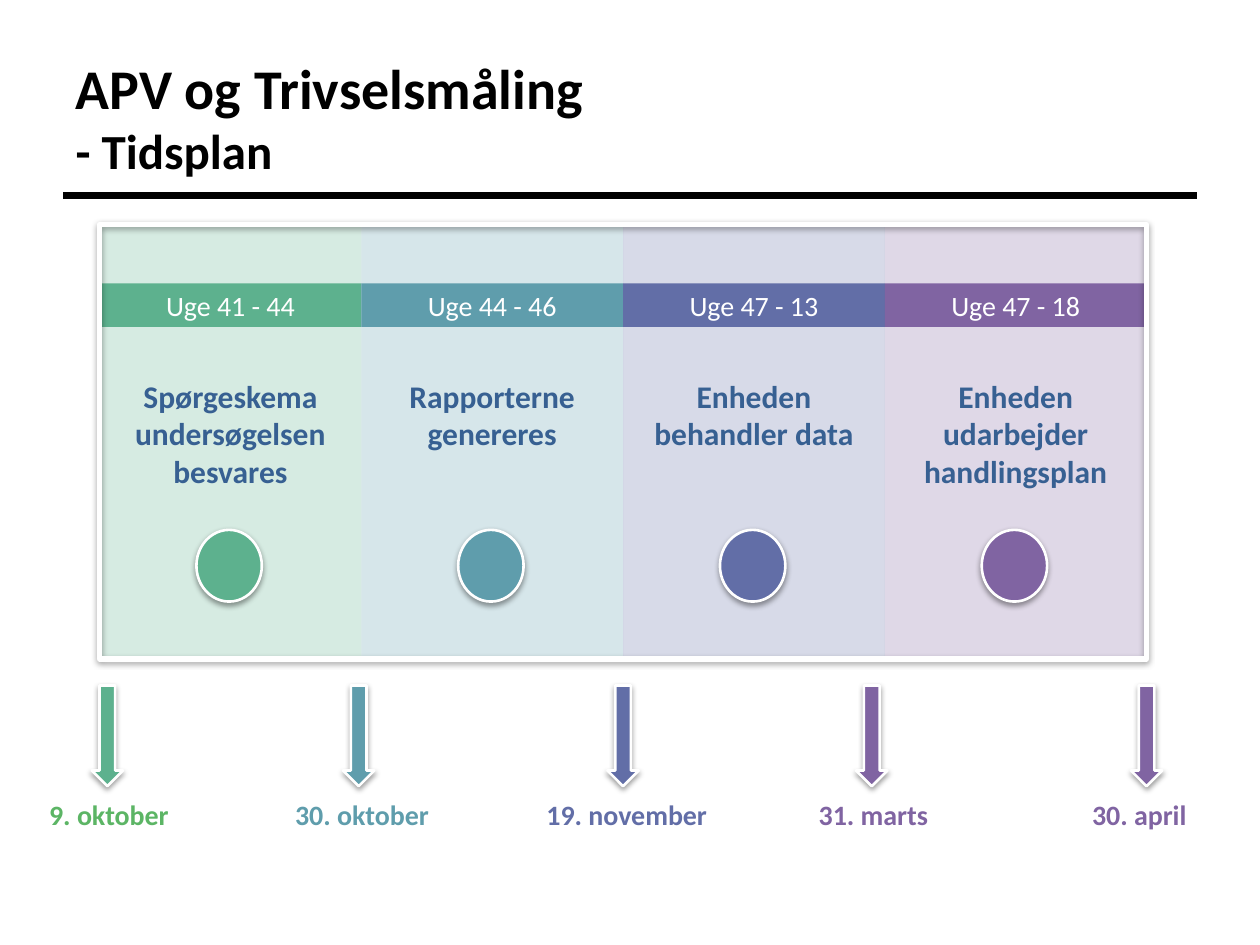
import dataclasses

import lxml.etree
import pptx
import pptx.dml.color
import pptx.enum.shapes
import pptx.enum.text
import pptx.oxml
import pptx.oxml.ns
import pptx.util

KIND = pptx.enum.shapes.MSO_SHAPE
SIDE = pptx.enum.text.PP_ALIGN
HOLD = pptx.enum.text.MSO_ANCHOR
FIT = pptx.enum.text.MSO_AUTO_SIZE
QN = pptx.oxml.ns.qn


@dataclasses.dataclass(frozen=True)
class Theme:
    """Colours, font and type sizes of the slide."""
    font: str = "Calibri"
    ink: str = "000000"
    white: str = "FFFFFF"
    body: str = "376092"
    lime: str = "5CB565"
    green: str = "5DB18E"
    teal: str = "5F9DAC"
    blue: str = "626EA7"
    plum: str = "8064A2"
    head: int = 32
    sub: int = 28
    task: int = 18
    small: int = 16


LOOK = Theme()

PHASES = [
    ("Uge 41 - 44", "Spørgeskema undersøgelsen besvares", LOOK.green),
    ("Uge 44 - 46", "Rapporterne genereres", LOOK.teal),
    ("Uge 47 - 13", "Enheden behandler data", LOOK.blue),
    ("Uge 47 - 18", "Enheden udarbejder handlingsplan", LOOK.plum),
]

DATES = [
    ("9. oktober", 0.03, -0.24, 0.64, LOOK.green, LOOK.lime, SIDE.LEFT),
    ("30. oktober", 0.99, 0.7, 0.7, LOOK.teal, LOOK.teal, SIDE.LEFT),
    ("19. november", 2, 1.66, 0.81, LOOK.blue, LOOK.blue, SIDE.LEFT),
    ("31. marts", 2.95, 2.7, 0.59, LOOK.plum, LOOK.plum, SIDE.LEFT),
    ("30. april", 4, 3.71, 0.49, LOOK.plum, LOOK.plum, SIDE.RIGHT),
]


@dataclasses.dataclass(frozen=True)
class Box:
    """A region that is divided into columns and rows."""
    left: float
    top: float
    wide: float
    high: float
    cols: float = 1
    rows: float = 1

    def cut(self, col, row, wide, high, cols=1, rows=1):
        """Return the part that spans the given cells."""
        dx, dy = self.wide / self.cols, self.high / self.rows
        return Box(self.left + col * dx, self.top + row * dy,
                   wide * dx, high * dy, cols, rows)

    def place(self):
        """Return left, top, width and height as lengths."""
        return [pptx.util.Inches(n)
                for n in (self.left, self.top, self.wide, self.high)]


def tint(code):
    """Turn a hex code into a colour."""
    return pptx.dml.color.RGBColor.from_string(code)


def write(frame, text, size, color, bold=False, align=SIDE.CENTER,
          anchor=HOLD.TOP, wrap=True, fit=FIT.NONE, sub=None):
    """Fill a text frame, with later lines in the sub size."""
    frame.word_wrap = wrap
    frame.auto_size = fit
    frame.vertical_anchor = anchor
    para = frame.paragraphs[0]
    para.alignment = align
    for spot, line in enumerate(text.split("\n")):
        if spot:
            para.add_line_break()
        run = para.add_run()
        run.text = line
        run.font.name = LOOK.font
        run.font.size = pptx.util.Pt(sub if spot else size)
        run.font.bold = bold
        run.font.color.rgb = tint(color)


def label(slide, box, text, size, color, **form):
    """Add a bold text box that grows with its text."""
    note = slide.shapes.add_textbox(*box.place())
    write(note.text_frame, text, size, color, bold=True,
          fit=FIT.SHAPE_TO_FIT_TEXT, **form)


def shade(shape):
    """Give a shape a soft shadow below it."""
    pack = shape._element.spPr.find(QN("a:effectLst"))
    cast = lxml.etree.SubElement(
        pack, QN("a:outerShdw"), blurRad="40000", dist="20000",
        dir="5400000", rotWithShape="0")
    tone = lxml.etree.SubElement(cast, QN("a:srgbClr"), val=LOOK.ink)
    lxml.etree.SubElement(tone, QN("a:alpha"), val="38000")


def draw(slide, kind, box, fill=None, edge=None, alpha=None):
    """Add a preset shape; an edged one also casts a shadow."""
    shape = slide.shapes.add_shape(kind, *box.place())
    shape.shadow.inherit = False
    if fill:
        shape.fill.solid()
        shape.fill.fore_color.rgb = tint(fill)
    else:
        shape.fill.background()
    if alpha:
        tone = shape._element.spPr.find(QN("a:solidFill"))[0]
        lxml.etree.SubElement(tone, QN("a:alpha"), val=str(alpha * 1000))
    if edge:
        shape.line.color.rgb = tint(LOOK.white)
        shape.line.width = pptx.util.Pt(edge)
        shade(shape)
    else:
        shape.line.fill.background()
    return shape


def header(slide, box):
    """Place the title and the rule along its foot."""
    title = slide.shapes.title
    title.left, title.top, title.width, title.height = box.place()
    write(title.text_frame, "APV og Trivselsmåling\n- Tidsplan", LOOK.head,
          LOOK.ink, bold=True, align=SIDE.LEFT, anchor=HOLD.MIDDLE,
          sub=LOOK.sub)
    left, top, wide, high = box.place()
    rule = slide.shapes.add_connector(
        pptx.enum.shapes.MSO_CONNECTOR.STRAIGHT,
        left, top + high, left + wide, top + high)
    rule.line.color.rgb = tint(LOOK.ink)
    rule.line.width = pptx.util.Pt(3.75)
    lxml.etree.SubElement(rule._element.spPr, QN("a:effectLst"))


def phase(slide, box, week, task, color):
    """Place one column with its week bar, task and dot."""
    draw(slide, KIND.RECTANGLE, box, color, alpha=25)
    bar = draw(slide, KIND.RECTANGLE, box.cut(0, 1.36, 1, 1), color)
    write(bar.text_frame, week, LOOK.small, LOOK.white, anchor=HOLD.MIDDLE)
    draw(slide, KIND.OVAL, box.cut(0.37, 7.03, 0.25, 1.65), color, edge=1.5)
    label(slide, box.cut(0.05, 3.36, 0.9, 3.07), task, LOOK.task, LOOK.body)


def panel(slide, box):
    """Place the phases side by side inside a white frame."""
    for spot, (week, task, color) in enumerate(PHASES):
        phase(slide, box.cut(spot, 0, 1, 1, rows=10), week, task, color)
    draw(slide, KIND.RECTANGLE, box, edge=3)


def dates(slide, box):
    """Place the arrows and the dates they point at."""
    for text, mid, left, wide, fill, color, align in DATES:
        draw(slide, KIND.DOWN_ARROW, box.cut(mid - 0.06, 0, 0.12, 6.5),
             fill, edge=1.5)
        label(slide, box.cut(left, 6.83, wide, 3.17), text, LOOK.small,
              color, align=align, wrap=False)


def main():
    """Build the slide and save it."""
    deck = pptx.Presentation()
    page = Box(0, 0, 10, 7.5, cols=10, rows=7.5)
    deck.slide_width, deck.slide_height = page.place()[2:]
    slide = deck.slides.add_slide(deck.slide_layouts[5])
    header(slide, page.cut(0.5, 0.3, 9, 1.25))
    panel(slide, page.cut(0.79, 1.78, 8.31, 3.45, cols=4))
    dates(slide, page.cut(0.79, 5.44, 8.31, 1.23, cols=4, rows=10))
    deck.save("out.pptx")


if __name__ == "__main__":
    main()
